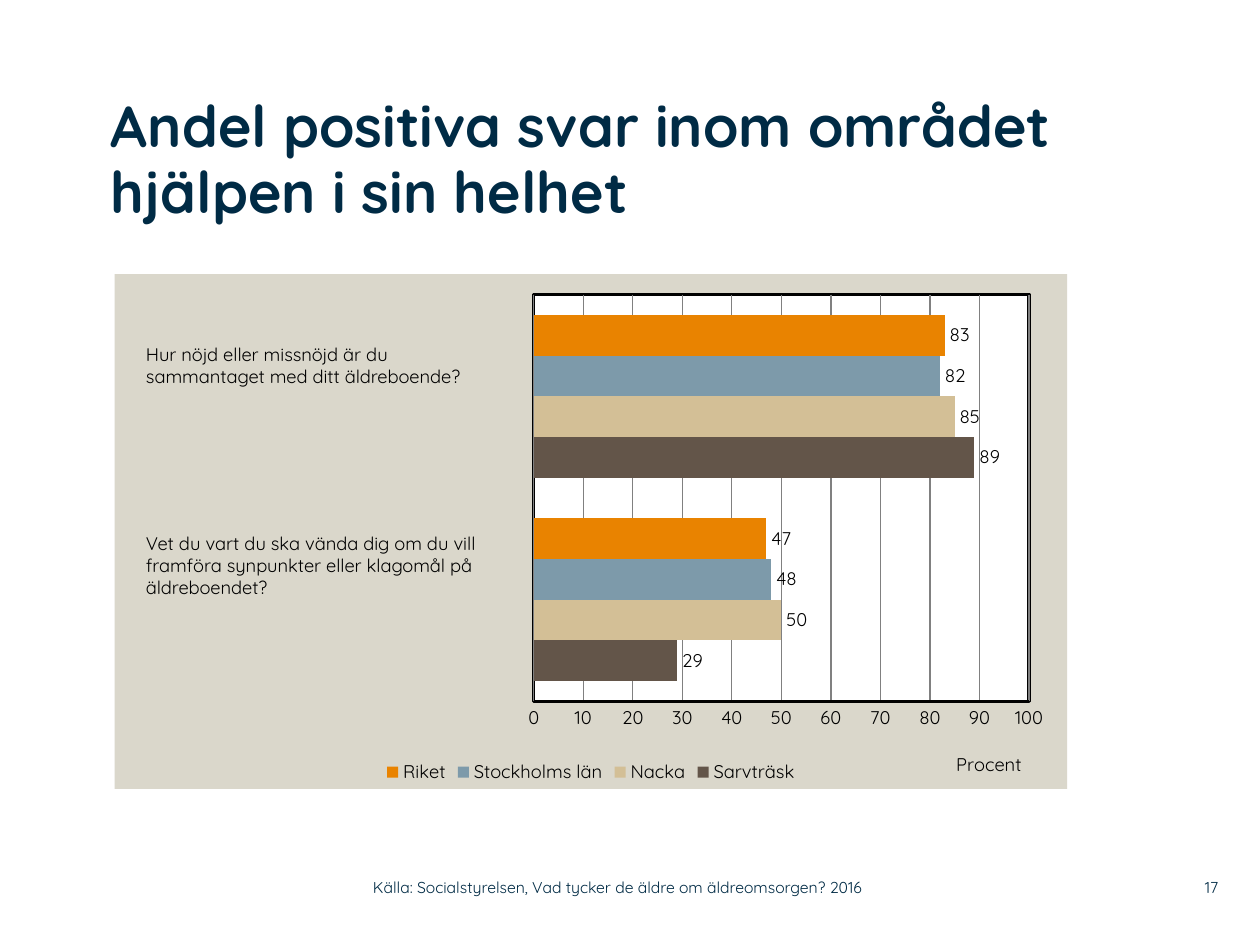
from dataclasses import dataclass

from lxml import etree
from pptx import Presentation, util as u
from pptx.chart.data import CategoryChartData
from pptx.dml.color import RGBColor
from pptx.enum import chart as ch, text
from pptx.oxml import parse_xml
from pptx.oxml.ns import nsdecls, qn


@dataclass(frozen=True)
class Theme:
    font: str = "Quicksand"
    ink: str = "002B45"
    black: str = "000000"
    white: str = "FFFFFF"
    panel: str = "DAD7CB"
    grid: str = "808080"
    title_size: float = 33
    body_size: float = 10.5
    footer_size: float = 9


THEME = Theme()
WIDTH, HEIGHT = u.Inches(10), u.Inches(7.5)

RESULTS = [
    ("Sarvträsk", (29, 89), "635549"),
    ("Nacka", (50, 85), "D3BF96"),
    ("Stockholms län", (48, 82), "7D9AAA"),
    ("Riket", (47, 83), "E98300"),
]


def share(left, top, width, height):
    return tuple(int(total * part) for total, part in
                 zip((WIDTH, HEIGHT, WIDTH, HEIGHT), (left, top, width, height)))


def style(font, size, color, bold=False):
    font.name = THEME.font
    font.size = u.Pt(size)
    font.bold = bold
    font.color.rgb = RGBColor.from_string(color)


def paint(fill, color):
    fill.solid()
    fill.fore_color.rgb = RGBColor.from_string(color)


def fill_frame(frame, words, size, color, bold=False, margin=0.0,
               anchor=text.MSO_ANCHOR.TOP, align=text.PP_ALIGN.LEFT):
    frame.word_wrap = True
    frame.auto_size = text.MSO_AUTO_SIZE.NONE
    frame.vertical_anchor = anchor
    frame.margin_left = frame.margin_right = u.Inches(margin)
    frame.margin_top = frame.margin_bottom = u.Inches(margin / 2)
    frame.text = words
    for paragraph in frame.paragraphs:
        paragraph.alignment = align
        for run in paragraph.runs:
            style(run.font, size, color, bold)


def place_title(slide, box):
    heading = slide.shapes.title
    heading.left, heading.top, heading.width, heading.height = box
    fill_frame(heading.text_frame, "Andel positiva svar inom området hjälpen i sin helhet",
               THEME.title_size, THEME.ink, bold=True)
    heading.text_frame.paragraphs[0].line_spacing = 0.95


def place_question(slide, box, words):
    question = slide.shapes.add_textbox(*box)
    fill_frame(question.text_frame, words, THEME.body_size, THEME.black, margin=0.1)


def place_footer(slide, box, words, align):
    footer = slide.shapes.add_textbox(*box)
    fill_frame(footer.text_frame, words, THEME.footer_size, THEME.ink,
               anchor=text.MSO_ANCHOR.MIDDLE, align=align)


def area_format(color, border=None):
    line = (f'<a:ln w="{u.Pt(2)}"><a:solidFill><a:srgbClr val="{border}"/></a:solidFill></a:ln>'
            if border else '<a:ln><a:noFill/></a:ln>')
    return parse_xml(f'<c:spPr {nsdecls("c", "a")}><a:solidFill><a:srgbClr val="{color}"/>'
                     f'</a:solidFill>{line}</c:spPr>')


def set_layout(parent, index, **places):
    for old in parent.findall(qn("c:layout")):
        parent.remove(old)
    layout = etree.Element(qn("c:layout"))
    manual = etree.SubElement(layout, qn("c:manualLayout"))
    for tag, value in places.items():
        etree.SubElement(manual, qn(f"c:{tag}")).set("val", str(value))
    parent.insert(index, layout)


def format_value_axis(axis):
    axis.minimum_scale, axis.maximum_scale, axis.major_unit = 0, 100, 10
    axis.major_tick_mark = ch.XL_TICK_MARK.NONE
    axis.format.line.width = u.Pt(2)
    axis.format.line.color.rgb = RGBColor.from_string(THEME.black)
    axis.major_gridlines.format.line.width = u.Pt(0.75)
    axis.major_gridlines.format.line.color.rgb = RGBColor.from_string(THEME.grid)
    style(axis.tick_labels.font, THEME.body_size, THEME.black)
    label = axis.axis_title
    label.text_frame.text = "Procent"
    style(label.text_frame.paragraphs[0].runs[0].font, THEME.body_size, THEME.black)
    set_layout(label._element, 1, xMode="edge", yMode="edge", x=0.88, y=0.92)


def place_chart(slide, box):
    data = CategoryChartData()
    data.categories = ["1", "2"]
    for name, values, _ in RESULTS:
        data.add_series(name, values)
    chart = slide.shapes.add_chart(ch.XL_CHART_TYPE.BAR_CLUSTERED, *box, data).chart
    style(chart.font, THEME.body_size, THEME.black)
    chart.has_title = False
    chart.has_legend = True
    chart.legend.position = ch.XL_LEGEND_POSITION.BOTTOM
    chart.legend.include_in_layout = False
    style(chart.legend.font, THEME.body_size, THEME.black)
    chart.category_axis.visible = False
    format_value_axis(chart.value_axis)

    bars = chart.plots[0]
    bars.gap_width, bars.overlap, bars.vary_by_categories = 100, 0, False
    for series, (_, _, color) in zip(bars.series, RESULTS):
        paint(series.format.fill, color)
        labels = series.data_labels
        labels.show_value = True
        labels.position = ch.XL_LABEL_POSITION.OUTSIDE_END
        style(labels.font, THEME.body_size, THEME.black)

    space = chart._chartSpace
    plot_area = space.chart.plotArea
    set_layout(plot_area, 0, layoutTarget="inner", xMode="edge", yMode="edge",
               x=0.44, y=0.04, w=0.52, h=0.79)
    plot_area.append(area_format(THEME.white, THEME.black))
    space.chart.addnext(area_format(THEME.panel))


def build():
    deck = Presentation()
    deck.slide_width, deck.slide_height = WIDTH, HEIGHT
    slide = deck.slides.add_slide(deck.slide_layouts[5])
    place_chart(slide, share(0.091, 0.29, 0.756, 0.545))
    place_title(slide, share(0.088, 0.1, 0.76, 0.19))
    place_question(slide, share(0.106, 0.357, 0.298, 0.06),
                   "Hur nöjd eller missnöjd är du\nsammantaget med ditt äldreboende?")
    place_question(slide, share(0.106, 0.557, 0.297, 0.084),
                   "Vet du vart du ska vända dig om du vill framföra synpunkter "
                   "eller klagomål på äldreboendet?")
    place_footer(slide, share(0.92, 0.919, 0.047, 0.039), "17", text.PP_ALIGN.RIGHT)
    place_footer(slide, share(0.296, 0.919, 0.443, 0.039),
                 "Källa: Socialstyrelsen, Vad tycker de äldre om äldreomsorgen? 2016",
                 text.PP_ALIGN.LEFT)
    deck.save("out.pptx")


if __name__ == "__main__":
    build()
